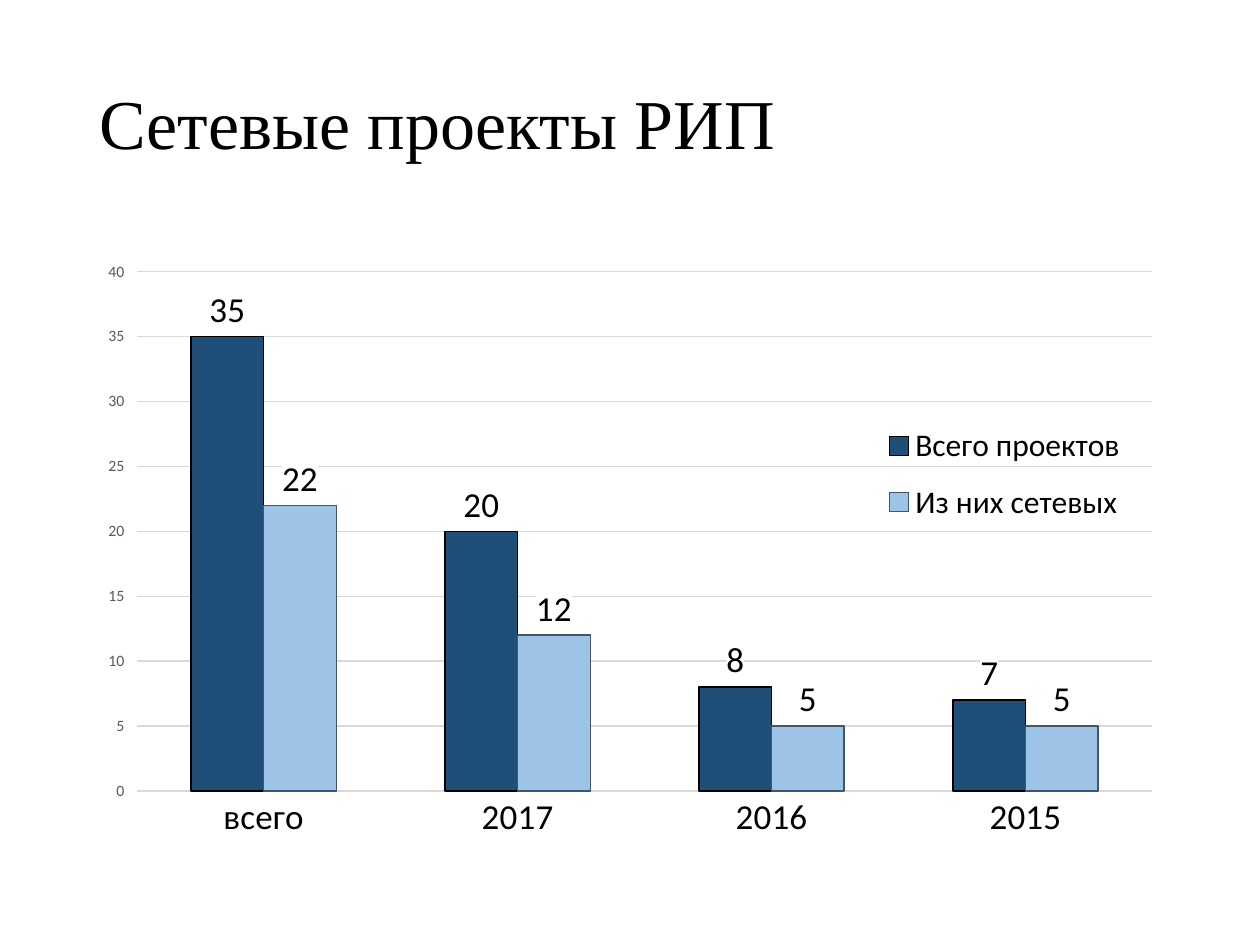
from lxml.etree import SubElement
from pptx import Presentation
from pptx.chart.data import CategoryChartData
from pptx.dml.color import RGBColor
from pptx.enum.chart import XL_CHART_TYPE, XL_LABEL_POSITION, XL_LEGEND_POSITION, XL_TICK_MARK
from pptx.enum.text import MSO_ANCHOR
from pptx.oxml import parse_xml
from pptx.oxml.ns import nsdecls, qn
from pptx.util import Cm, Pt

CATEGORIES = ["всего", "2017", "2016", "2015"]
SERIES = [
    ("Всего проектов", (35, 20, 8, 7), "1F4E79", "000000"),
    ("Из них сетевых", (22, 12, 5, 5), "9DC3E6", "44546A"),
]


def color(value):
    """Turn a hex string into a colour."""
    return RGBColor.from_string(value)


def style_font(font, size, value="000000", name="Calibri"):
    """Set the typeface, size and colour of a font."""
    font.name = name
    font.size = Pt(size)
    font.color.rgb = color(value)


def style_line(line, value):
    """Give a line its colour and the common thin width."""
    line.color.rgb = color(value)
    line.width = Pt(0.75)


def manual_layout(x, y, w, h, inner=False):
    """Return a chart layout element given as fractions of the chart."""
    layout = parse_xml(f"<c:layout {nsdecls('c')}><c:manualLayout/></c:layout>")
    manual = layout[0]
    settings = [("layoutTarget", "inner")] if inner else []
    settings += [("xMode", "edge"), ("yMode", "edge")]
    settings += [("x", x), ("y", y), ("w", w), ("h", h)]
    for tag, value in settings:
        SubElement(manual, qn(f"c:{tag}")).set("val", str(value))
    return layout


def add_title(page, left, top, width, height):
    """Place the heading in its box."""
    box = page.shapes.add_textbox(Cm(left), Cm(top), Cm(width), Cm(height))
    frame = box.text_frame
    frame.word_wrap = True
    frame.vertical_anchor = MSO_ANCHOR.MIDDLE
    para = frame.paragraphs[0]
    para.line_spacing = 0.9
    span = para.add_run()
    span.text = "Сетевые проекты РИП"
    style_font(span.font, 40, name="Times New Roman")


def style_axes(chart):
    """Format the category and value axes."""
    categories = chart.category_axis
    categories.major_tick_mark = XL_TICK_MARK.NONE
    style_font(categories.tick_labels.font, 20)
    style_line(categories.format.line, "D9D9D9")
    values = chart.value_axis
    values.minimum_scale, values.maximum_scale, values.major_unit = 0, 40, 5
    style_font(values.tick_labels.font, 9, "595959")
    values.format.line.fill.background()
    style_line(values.major_gridlines.format.line, "D9D9D9")


def style_series(series, fill, outline):
    """Colour one series and label its columns on white."""
    series.format.fill.solid()
    series.format.fill.fore_color.rgb = color(fill)
    style_line(series.format.line, outline)
    labels = series.data_labels
    labels.show_value = True
    labels.position = XL_LABEL_POSITION.OUTSIDE_END
    style_font(labels.font, 20)
    backing = parse_xml(
        f"<c:spPr {nsdecls('c', 'a')}><a:solidFill>"
        '<a:srgbClr val="FFFFFF"/></a:solidFill></c:spPr>'
    )
    labels._element.find(qn("c:txPr")).addprevious(backing)


def add_legend(chart):
    """Lay the legend over the right part of the plot."""
    chart.has_legend = True
    legend = chart.legend
    legend.position = XL_LEGEND_POSITION.RIGHT
    legend.include_in_layout = True
    style_font(legend.font, 18)
    element = legend._element
    for old in element.findall(qn("c:layout")):
        element.remove(old)
    element.find(qn("c:legendPos")).addnext(manual_layout(0.73, 0.26, 0.23, 0.22))


def add_project_chart(page, left, top, width, height):
    """Place the column chart of projects in its box."""
    data = CategoryChartData()
    data.categories = CATEGORIES
    for name, values, _, _ in SERIES:
        data.add_series(name, values)
    chart = page.shapes.add_chart(
        XL_CHART_TYPE.COLUMN_CLUSTERED, Cm(left), Cm(top), Cm(width), Cm(height), data
    ).chart
    chart.has_title = False
    style_font(chart.font, 10)
    plot = chart.plots[0]
    plot.gap_width, plot.overlap = 150, 0
    plot.vary_by_categories = False
    for series, (_, _, fill, outline) in zip(plot.series, SERIES):
        style_series(series, fill, outline)
    style_axes(chart)
    add_legend(chart)
    area = chart._chartSpace.find(f".//{qn('c:plotArea')}")
    for old in area.findall(qn("c:layout")):
        area.remove(old)
    area.insert(0, manual_layout(0.046, 0.033, 0.935, 0.865, inner=True))


def main():
    """Build the slide and save the deck."""
    deck = Presentation()
    deck.slide_width, deck.slide_height = Cm(25.4), Cm(19.05)
    page = deck.slides.add_slide(deck.slide_layouts[6])
    add_title(page, 1.75, 1.02, 16.94, 3.07)
    add_project_chart(page, 1.75, 5.08, 21.9, 12.1)
    deck.save("out.pptx")


if __name__ == "__main__":
    main()
